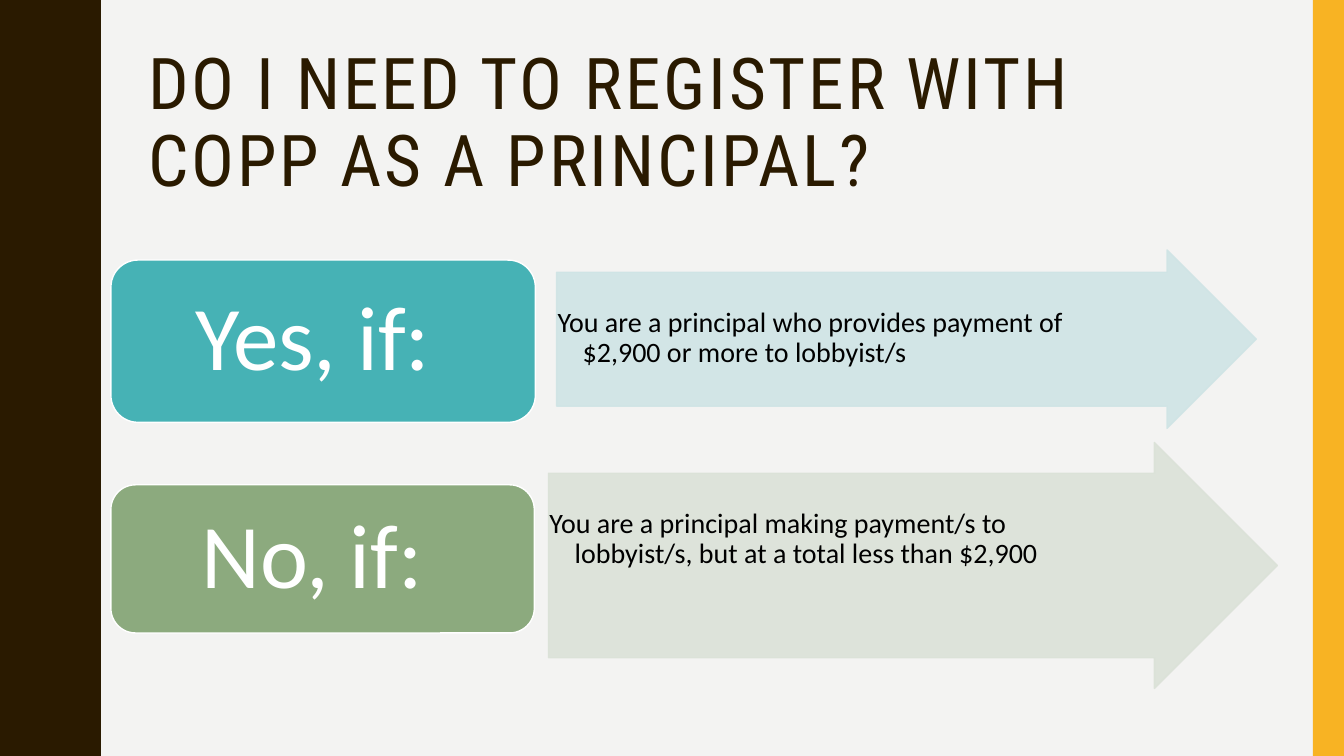
from lxml import etree
from pptx import Presentation
from pptx.dml.color import RGBColor
from pptx.enum.shapes import MSO_SHAPE as Preset
from pptx.enum.text import MSO_ANCHOR as Anchor, MSO_AUTO_SIZE as AutoSize, PP_ALIGN as Align
from pptx.oxml.ns import qn
from pptx.util import Inches, Pt

BROWN, GOLD, PAPER = "2A1A00", "F8B323", "F3F3F2"
WAVE_PERIOD = 1.5
HALF_WAVE = [
    (0.78, 0), (0.78, 0.07), (0.79, 0.14), (0.8, 0.2), (0.81, 0.25),
    (0.83, 0.29), (0.85, 0.33), (0.87, 0.38), (0.89, 0.42), (0.91, 0.46),
    (0.93, 0.5), (0.95, 0.55), (0.96, 0.61), (0.97, 0.68), (0.97, 0.75),
]
ANSWERS = [
    ("Yes, if: ", "46B2B5", (1.1, 2.58, 4.21, 1.61),
     "You are a principal who provides payment of $2,900 or more to lobbyist/s",
     "CFE4E5", (5.52, 2.48, 6.94, 1.77)),
    ("No, if: ", "8CAA7E", (1.1, 4.81, 4.2, 1.47),
     "You are a principal making payment/s to lobbyist/s, but at a total less than $2,900",
     "DBE2D8", (5.44, 4.39, 7.23, 2.44)),
]


def paint(fill, color):
    fill.solid()
    fill.fore_color.rgb = RGBColor.from_string(color)


def set_opacity(fill_parent, percent):
    for color in fill_parent.iter(qn("a:srgbClr")):
        etree.SubElement(color, qn("a:alpha"), val=str(percent * 1000))


def style_shape(shape, color, line_color=None):
    shape.shadow.inherit = False
    paint(shape.fill, color)
    if line_color:
        paint(shape.line.fill, line_color)
        shape.line.width = Pt(1)
    else:
        shape.line.fill.background()


def add_preset(slide, preset, box, color, line_color=None):
    shape = slide.shapes.add_shape(preset, *map(Inches, box))
    style_shape(shape, color, line_color)
    return shape


def write(shape, text, size, font, color, align, anchor, margins):
    frame = shape.text_frame
    frame.word_wrap = True
    frame.auto_size = AutoSize.NONE
    frame.vertical_anchor = anchor
    (frame.margin_left, frame.margin_top,
     frame.margin_right, frame.margin_bottom) = map(Inches, margins)
    paragraph = frame.paragraphs[0]
    paragraph.alignment = align
    paragraph.line_spacing = 0.9
    run = paragraph.add_run()
    run.text = text
    run.font.size = Pt(size)
    run.font.name = font
    run.font.color.rgb = RGBColor.from_string(color)
    return paragraph


def add_wavy_edge(slide):
    wave = HALF_WAVE + [(x, WAVE_PERIOD - y) for x, y in HALF_WAVE[-2::-1]]
    points = [(x, y + WAVE_PERIOD * turn) for turn in range(5) for x, y in wave]
    builder = slide.shapes.build_freeform(0, 0, scale=Inches(1))
    builder.add_line_segments(points + [(0, 7.5)], close=True)
    style_shape(builder.convert_to_shape(), BROWN)


def add_title(slide, text):
    title = slide.shapes.title
    title.left, title.top, title.width, title.height = map(Inches, (1.37, 0.42, 11.12, 1.63))
    paragraph = write(title, text, 51, "Roboto Condensed", BROWN,
                      Align.LEFT, Anchor.MIDDLE, (0.1, 0.05, 0.1, 0.05))
    paragraph.runs[0].font._element.set("spc", "200")


def add_arrow(slide, text, color, box):
    arrow = add_preset(slide, Preset.RIGHT_ARROW, box, color, color)
    arrow.adjustments[0], arrow.adjustments[1] = 0.75, 0.5
    set_opacity(arrow._element.spPr, 90)
    paragraph = write(arrow, text, 20, "Calibri", "000000", Align.LEFT, Anchor.TOP,
                      (0.01, 0.36, box[3] / 4, 0.01))
    properties = paragraph._p.get_or_add_pPr()
    properties.set("marL", str(Inches(0.25)))
    properties.set("indent", str(-Inches(0.25)))


def add_answer(slide, text, color, box):
    answer = add_preset(slide, Preset.ROUNDED_RECTANGLE, box, color, "FFFFFF")
    write(answer, text, 65, "Calibri", "FFFFFF", Align.CENTER, Anchor.MIDDLE,
          (0.27, 0.14, 0.27, 0.14))


def main():
    """Build the slide on who must register as a principal."""
    presentation = Presentation()
    presentation.slide_width, presentation.slide_height = Inches(13.33), Inches(7.5)
    slide = presentation.slides.add_slide(presentation.slide_layouts[5])
    paint(slide.background.fill, PAPER)
    add_wavy_edge(slide)
    add_preset(slide, Preset.RECTANGLE, (13.02, 0, 0.31, 7.5), GOLD)
    add_title(slide, "DO I NEED TO REGISTER WITH COPP AS A PRINCIPAL?")
    for answer, answer_color, answer_box, condition, arrow_color, arrow_box in ANSWERS:
        add_arrow(slide, condition, arrow_color, arrow_box)
        add_answer(slide, answer, answer_color, answer_box)
    presentation.save("out.pptx")


if __name__ == "__main__":
    main()
